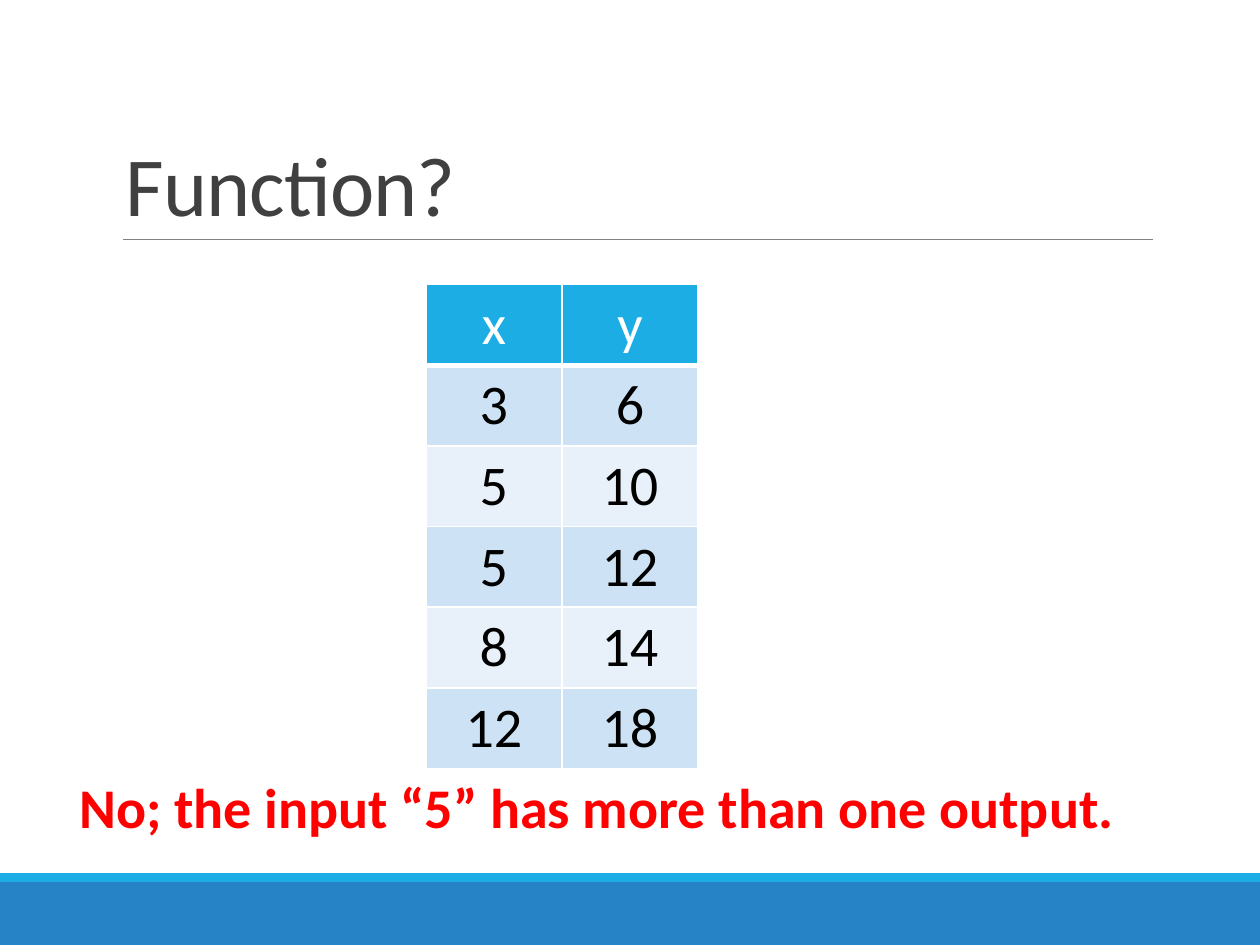
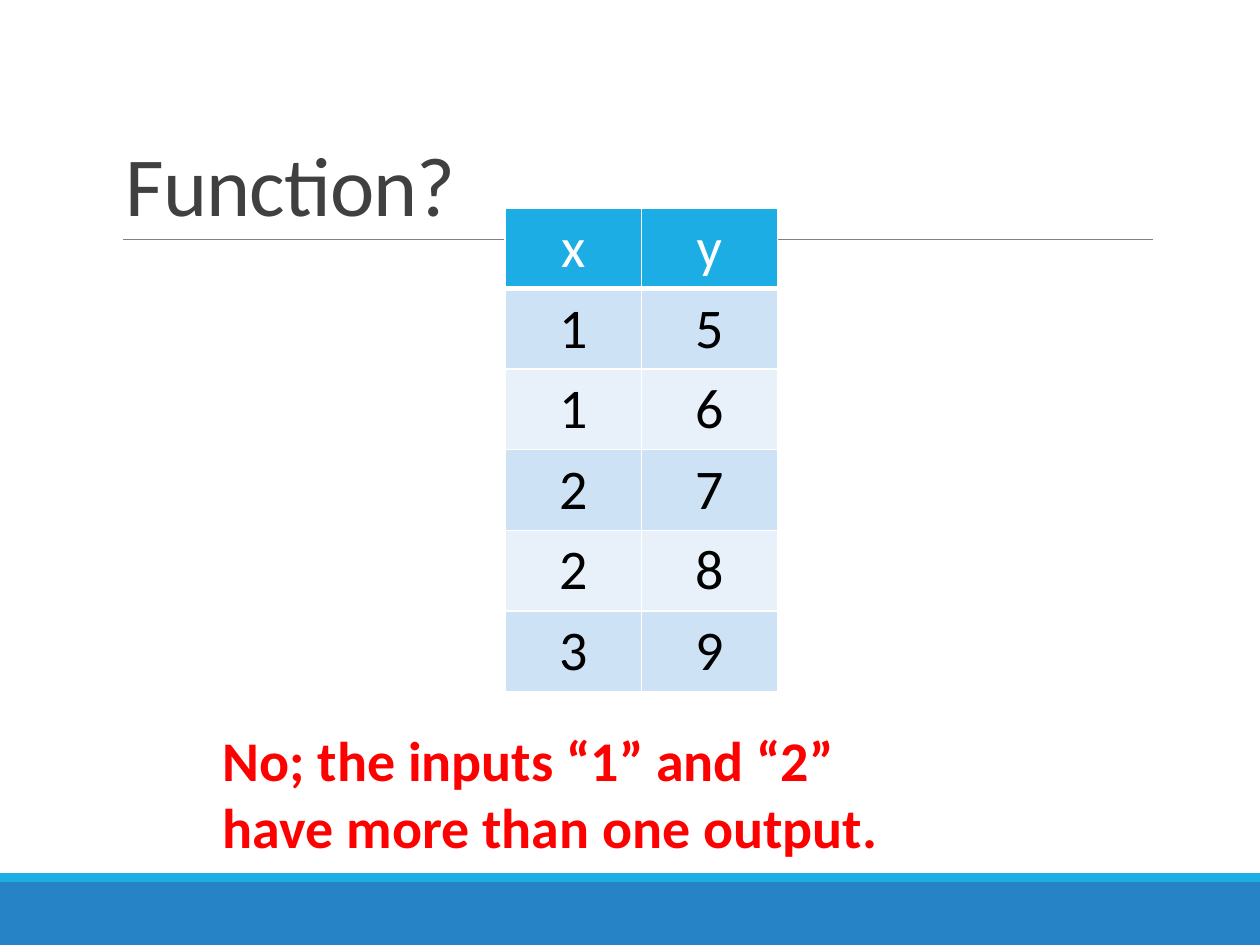
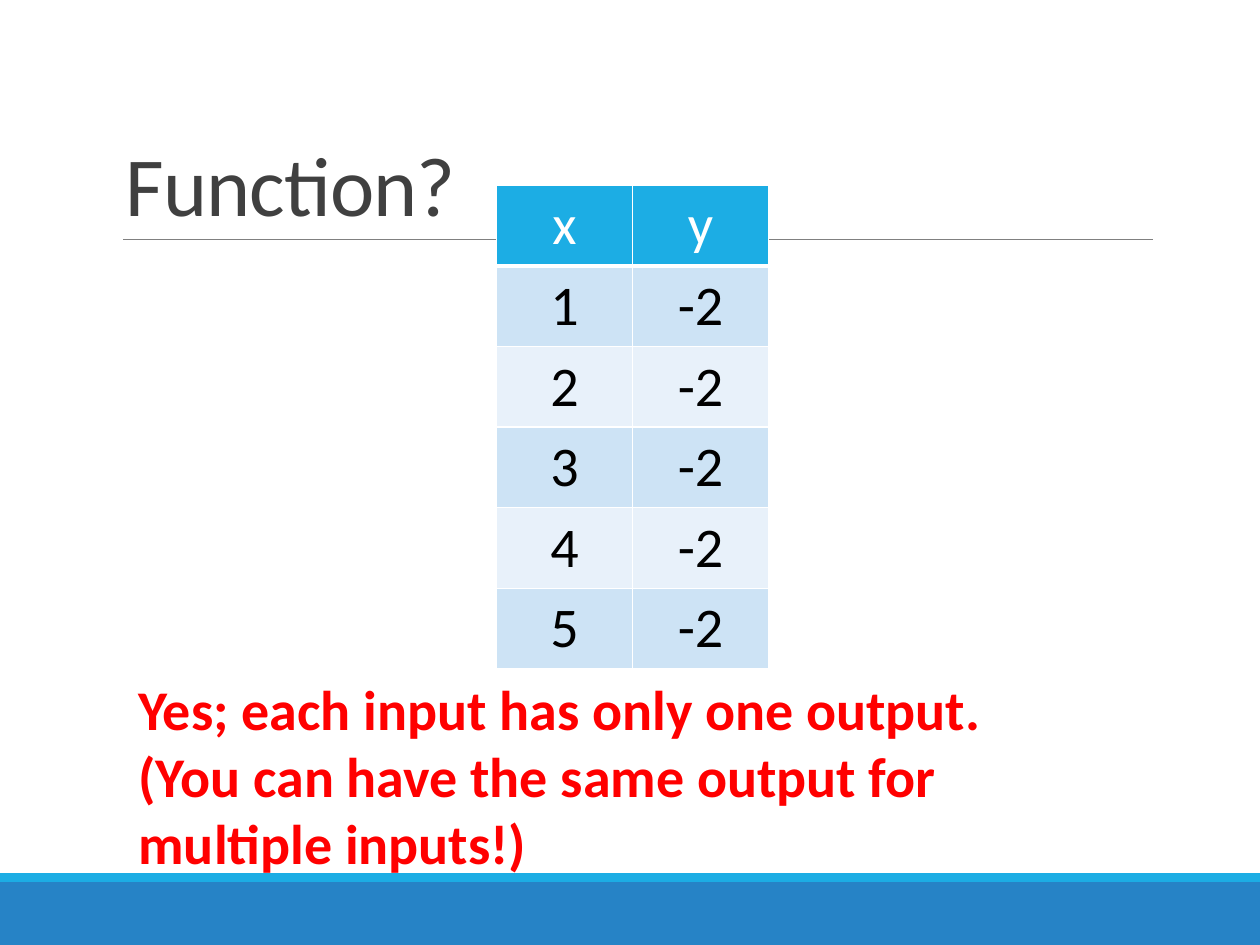
from lxml.etree import SubElement
from pptx import Presentation
from pptx.dml.color import RGBColor
from pptx.enum.shapes import MSO_CONNECTOR, MSO_SHAPE
from pptx.enum.text import MSO_ANCHOR, PP_ALIGN
from pptx.oxml.ns import qn
from pptx.util import Pt

PX = 9144
COLORS = {
    "band": "2683C6",
    "accent": "1CADE4",
    "rule": "808080",
    "title": "404040",
    "answer": "FF0000",
    "odd": "CDE3F5",
    "even": "E8F1FA",
    "header_text": "FFFFFF",
    "cell_text": "000000",
    "border": "FFFFFF",
}
RGB = {name: RGBColor.from_string(value) for name, value in COLORS.items()}
FORMATS = {
    "title": {"name": "Calibri", "size": Pt(48), "bold": False},
    "cell": {"name": "Calibri", "size": Pt(32), "bold": False},
    "answer": {"name": "Calibri", "size": Pt(32), "bold": True},
}
BANDS = [("band", 700, 50), ("accent", 693, 7)]
COL_W, ROW_H = 108, 64
SLIDES = [
    {
        "table_at": (338, 226),
        "pairs": [(3, 6), (5, 10), (5, 12), (8, 14), (12, 18)],
        "answer": "No; the input “5” has more than one output.",
        "answer_box": (53, 608, 891, 64),
    },
    {
        "table_at": (401, 165),
        "pairs": [(1, 5), (1, 6), (2, 7), (2, 8), (3, 9)],
        "answer": "No; the inputs “1” and “2” have more than one output.",
        "answer_box": (167, 571, 558, 118),
    },
    {
        "table_at": (394, 147),
        "pairs": [(x, -2) for x in range(1, 6)],
        "answer": "Yes; each input has only one output. "
                  "(You can have the same output for multiple inputs!)",
        "answer_box": (100, 530, 742, 172),
    },
]


def px(*lengths):
    return [length * PX for length in lengths]


def write(tf, text, fmt, color, align=PP_ALIGN.LEFT):
    tf.word_wrap = True
    p = tf.paragraphs[0]
    p.alignment = align
    r = p.add_run()
    r.text = text
    for name, value in FORMATS[fmt].items():
        setattr(r.font, name, value)
    r.font.color.rgb = RGB[color]
    return p


prs = Presentation()
prs.slide_width, prs.slide_height = px(1000, 750)

for content in SLIDES:
    s = prs.slides.add_slide(prs.slide_layouts[6])

    for color, top, height in BANDS:
        sp = s.shapes.add_shape(MSO_SHAPE.RECTANGLE, *px(0, top, 1000, height))
        sp.shadow.inherit = False
        sp.fill.solid()
        sp.fill.fore_color.rgb = RGB[color]
        sp.line.fill.background()

    rule = s.shapes.add_connector(MSO_CONNECTOR.STRAIGHT, *px(98, 190, 915, 190))
    rule.line.color.rgb = RGB["rule"]
    rule.line.width = Pt(0.5)
    SubElement(rule._element.spPr, qn("a:effectLst"))

    tf = s.shapes.add_textbox(*px(90, 31, 825, 159)).text_frame
    tf.vertical_anchor = MSO_ANCHOR.BOTTOM
    p = write(tf, "Function?", "title", "title")
    p.line_spacing = 0.85
    p.runs[0].font._element.set("spc", "-50")

    rows = [("x", "y"), *content["pairs"]]
    size = (2 * COL_W, len(rows) * ROW_H)
    table = s.shapes.add_table(len(rows), 2, *px(*content["table_at"], *size)).table
    for i, pair in enumerate(rows):
        fill = "accent" if i == 0 else "odd" if i % 2 else "even"
        text_color = "header_text" if i == 0 else "cell_text"
        for cell, value in zip(table.rows[i].cells, pair):
            write(cell.text_frame, str(value), "cell", text_color, PP_ALIGN.CENTER)
            tcPr = cell._tc.get_or_add_tcPr()
            for side in "LRTB":
                width = Pt(3 if i == 0 and side == "B" else 1)
                ln = SubElement(tcPr, qn(f"a:ln{side}"), w=str(width))
                solid = SubElement(ln, qn("a:solidFill"))
                SubElement(solid, qn("a:srgbClr"), val=COLORS["border"])
            cell.fill.solid()
            cell.fill.fore_color.rgb = RGB[fill]

    tf = s.shapes.add_textbox(*px(*content["answer_box"])).text_frame
    write(tf, content["answer"], "answer", "answer")

prs.save("out.pptx")
